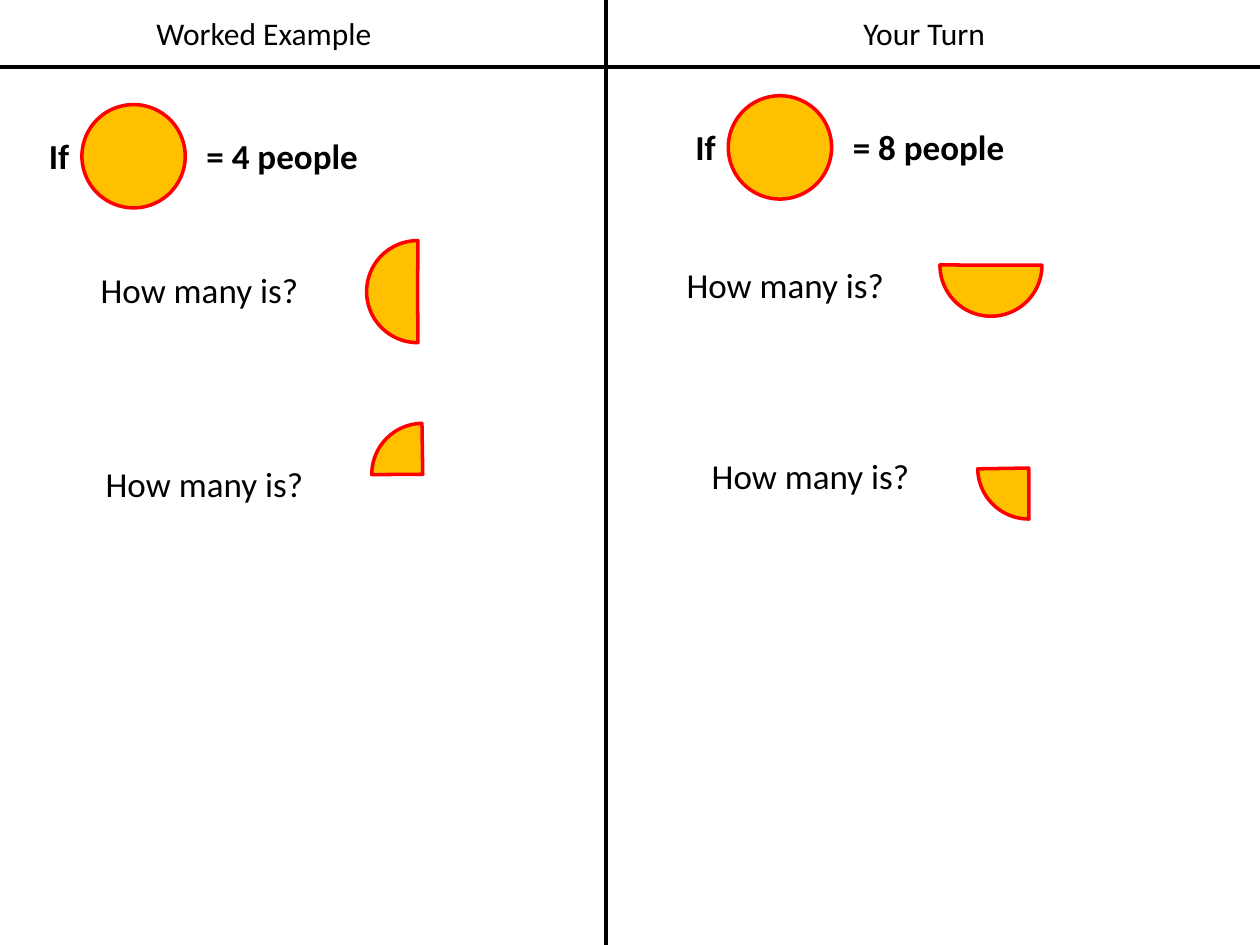
from dataclasses import dataclass

from lxml.etree import SubElement
from pptx import Presentation
from pptx.dml.color import RGBColor
from pptx.enum.shapes import MSO_CONNECTOR, MSO_SHAPE as Shape
from pptx.enum.text import MSO_AUTO_SIZE as AutoSize, PP_ALIGN as Align
from pptx.oxml.ns import qn
from pptx.slide import Slide
from pptx.util import Inches, Pt


@dataclass(frozen=True)
class Theme:
    font: str = "Calibri"
    ink: RGBColor = RGBColor(0, 0, 0)
    pizza: RGBColor = RGBColor(0xFF, 0xC0, 0x00)
    crust: RGBColor = RGBColor(0xFF, 0x00, 0x00)
    heading_size: int = 18
    body_size: int = 20
    rule_width: float = 2.5
    crust_width: float = 2


@dataclass(frozen=True)
class Question:
    """A question's position and its slice: position, angles in degrees, rotation."""
    left: float
    top: float
    slice_left: float
    slice_top: float
    start: float
    end: float
    rotation: float = 0


@dataclass(frozen=True)
class Column:
    heading: str
    heading_left: float
    left: float
    top: float
    people: int
    questions: tuple[Question, ...]


THEME = Theme()
WIDTH, HEIGHT = 10, 7.5
DIVIDER_X, HEADER_Y = 4.81, 0.53
CIRCLE_SIZE, SLICE_SIZE = 0.82, 0.81
ADJUSTMENT_PER_DEGREE = 0.6

COLUMNS = (
    Column("Worked Example", 1.13, 0.29, 0.83, 4, (
        Question(0.7, 2.08, 2.91, 1.91, 89.72, 270.29),
        Question(0.74, 3.62, 2.95, 3.36, 89.72, 179.06, rotation=90),
    )),
    Column("Your Turn", 6.37, 5.42, 0.76, 8, (
        Question(5.35, 2.04, 7.46, 1.7, 0, 180.31),
        Question(5.55, 3.56, 7.76, 3.31, 89.72, 179.06),
    )),
)


def add_text(slide: Slide, text: str, left: float, top: float, width: float,
             height: float = 0.44, *, size: float = THEME.body_size,
             bold: bool = False, align: Align = Align.LEFT, wrap: bool = False) -> None:
    box = slide.shapes.add_textbox(Inches(left), Inches(top), Inches(width), Inches(height))
    frame = box.text_frame
    frame.word_wrap = wrap
    frame.auto_size = AutoSize.SHAPE_TO_FIT_TEXT
    paragraph = frame.paragraphs[0]
    paragraph.alignment = align
    run = paragraph.add_run()
    run.text = text
    run.font.name = THEME.font
    run.font.size = Pt(size)
    run.font.bold = bold
    run.font.color.rgb = THEME.ink


def add_rule(slide: Slide, x1: float, y1: float, x2: float, y2: float) -> None:
    rule = slide.shapes.add_connector(
        MSO_CONNECTOR.STRAIGHT, Inches(x1), Inches(y1), Inches(x2), Inches(y2))
    rule.line.color.rgb = THEME.ink
    rule.line.width = Pt(THEME.rule_width)
    SubElement(rule._element.spPr, qn("a:effectLst"))


def add_pizza(slide: Slide, kind: Shape, left: float, top: float, size: float,
              angles: tuple[float, ...] = (), rotation: float = 0) -> None:
    """Add a whole pizza, or a slice of one between two angles."""
    pizza = slide.shapes.add_shape(kind, Inches(left), Inches(top), Inches(size), Inches(size))
    for index, angle in enumerate(angles):
        pizza.adjustments[index] = angle * ADJUSTMENT_PER_DEGREE
    pizza.rotation = rotation
    pizza.shadow.inherit = False
    pizza.fill.solid()
    pizza.fill.fore_color.rgb = THEME.pizza
    pizza.line.color.rgb = THEME.crust
    pizza.line.width = Pt(THEME.crust_width)


def add_column(slide: Slide, column: Column) -> None:
    add_text(slide, column.heading, column.heading_left, 0.06, 1.93, 0.4,
             size=THEME.heading_size, align=Align.CENTER, wrap=True)
    text_top = column.top + 0.19
    add_text(slide, f"= {column.people} people", column.left + 1.25, text_top, 1.42, bold=True)
    add_text(slide, "If", column.left, text_top, 0.43, bold=True)
    add_pizza(slide, Shape.OVAL, column.left + 0.36, column.top, CIRCLE_SIZE)
    for question in column.questions:
        add_text(slide, "How many is?", question.left, question.top, 1.79)
        add_pizza(slide, Shape.PIE, question.slice_left, question.slice_top, SLICE_SIZE,
                  (question.start, question.end), question.rotation)


def main() -> None:
    presentation = Presentation()
    presentation.slide_width = Inches(WIDTH)
    presentation.slide_height = Inches(HEIGHT)
    slide = presentation.slides.add_slide(presentation.slide_layouts[6])
    add_rule(slide, DIVIDER_X, 0, DIVIDER_X, HEIGHT)
    add_rule(slide, 0, HEADER_Y, WIDTH, HEADER_Y)
    for column in COLUMNS:
        add_column(slide, column)
    presentation.save("out.pptx")


if __name__ == "__main__":
    main()
